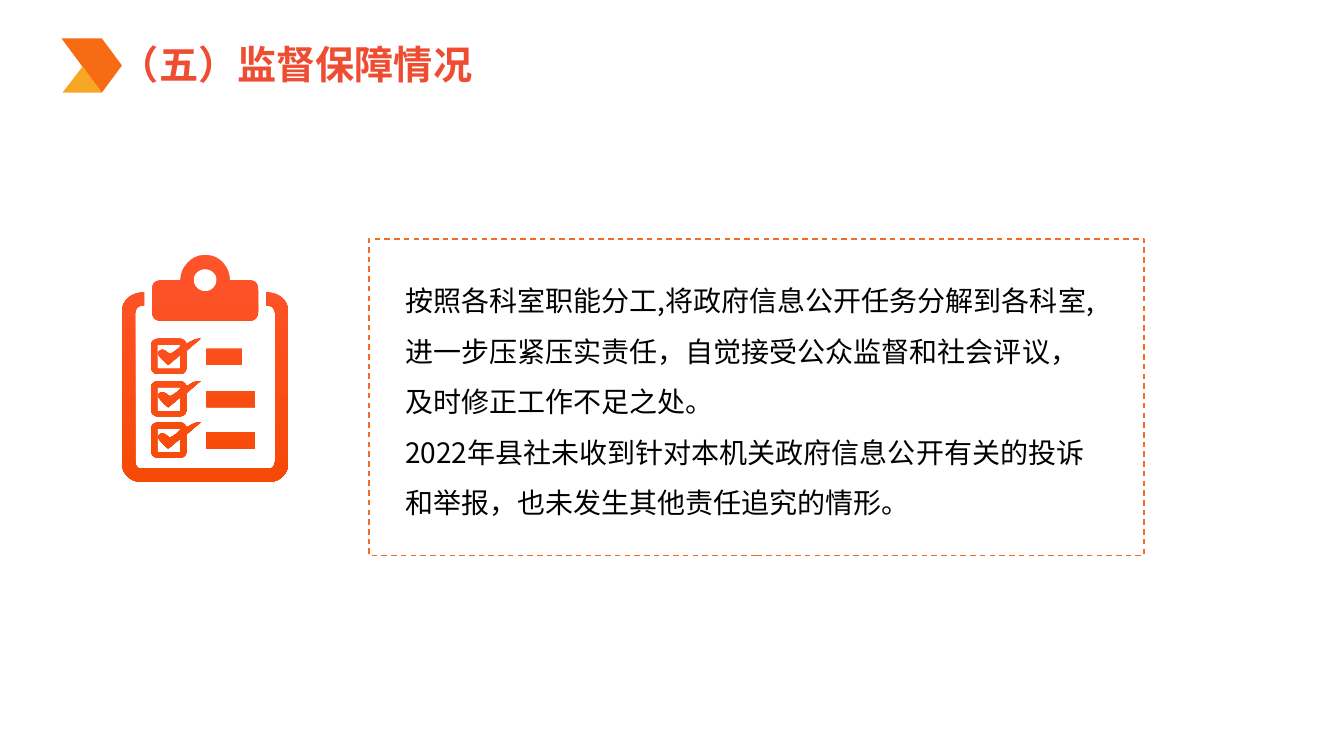
from pptx import Presentation
from pptx import util as u
from pptx.dml import color as c
from pptx.enum import dml, lang, shapes, text
from pptx.oxml.ns import qn
from lxml import etree

PX = 9144
FONT = "Noto Sans CJK SC"
ORANGE = "F76B14"
AMBER = "F8A724"

FRAME = [
    (134, 313), (134, 306, 137, 303, 143, 303), (143, 290),
    (131, 290, 121, 297, 121, 309), (121, 460),
    (121, 470, 130, 478, 139, 478), (268, 478),
    (277, 478, 286, 470, 286, 460), (286, 309),
    (286, 297, 276, 290, 264, 290), (264, 303),
    (270, 303, 273, 306, 273, 313), (273, 456),
    (273, 461, 271, 465, 267, 465), (140, 465),
    (135, 465, 134, 460, 134, 455),
]
HOLE = [
    (192, 277), (192, 272, 197, 267, 203, 267), (204, 267),
    (210, 267, 215, 272, 215, 277), (215, 278),
    (215, 284, 210, 289, 204, 289), (203, 289),
    (197, 289, 192, 284, 192, 278),
]
CLIP = [
    (179, 278), (161, 278), (154, 278, 151, 281, 151, 287), (151, 310),
    (151, 314, 154, 318, 158, 318), (249, 318),
    (253, 318, 256, 314, 256, 310), (256, 287),
    (256, 281, 253, 278, 247, 278), (228, 278),
    (228, 265, 218, 253, 205, 253), (202, 253),
    (190, 253, 179, 265, 179, 278),
]
BOX = [
    (185, 341), (184, 338, 181, 336, 178, 336), (158, 336),
    (154, 336, 150, 338, 150, 342), (150, 365),
    (150, 368, 153, 371, 156, 371), (179, 371),
    (188, 371, 185, 357, 185, 348), (199, 336), (198, 336),
    (192, 336, 188, 340, 185, 341),
]
TICK = [
    (156, 343), (156, 342, 156, 342, 158, 342), (178, 342),
    (179, 342, 179, 342, 179, 343), (179, 345, 170, 351, 169, 351),
    (167, 351, 164, 347, 161, 347), (159, 347, 157, 349, 157, 350),
    (157, 351), (157, 353, 165, 361, 167, 362), (179, 352),
    (179, 366), (156, 366),
]
ROWS = [(0, 240), (42, 253), (83, 253)]


def px(n):
    return u.Emu(n * PX)


def rgb(code):
    return c.RGBColor.from_string(code)


def lower(loop, dy):
    return [tuple(n + dy * (i % 2) for i, n in enumerate(step)) for step in loop]


def bend(start, step, parts=8):
    knots = [start, step[:2], step[2:4], step[4:]]
    points = []
    for i in range(1, parts + 1):
        t = i / parts
        s = 1 - t
        mix = (s ** 3, 3 * s * s * t, 3 * s * t * t, t ** 3)
        points.append(tuple(sum(m * k[a] for m, k in zip(mix, knots)) for a in (0, 1)))
    return points


def trace(loop):
    points = [loop[0]]
    for step in loop[1:]:
        points += bend(points[-1], step) if len(step) == 6 else [step]
    return [(x * PX, y * PX) for x, y in points]


def outline(slide, loops, *tones):
    pen = None
    for loop in loops:
        first, *rest = trace(loop)
        if pen is None:
            pen = slide.shapes.build_freeform(*first, scale=1)
        else:
            pen.move_to(*first)
        pen.add_line_segments(rest, close=True)
    shape = pen.convert_to_shape()
    shape.shadow.inherit = False
    shape.line.fill.background()
    if len(tones) == 1:
        shape.fill.solid()
        shape.fill.fore_color.rgb = rgb(tones[0])
        return
    shape.fill.gradient()
    shape.fill.gradient_angle = 270
    for stop, tone in zip(shape.fill.gradient_stops, tones):
        stop.color.rgb = rgb(tone)


def write(shape, lines, size, color, bold=False, wrap=True, space=1.0):
    frame = shape.text_frame
    frame.word_wrap = wrap
    frame.auto_size = text.MSO_AUTO_SIZE.SHAPE_TO_FIT_TEXT
    frame.vertical_anchor = text.MSO_ANCHOR.TOP
    for i, line in enumerate(lines):
        para = frame.add_paragraph() if i else frame.paragraphs[0]
        para.alignment = text.PP_ALIGN.LEFT
        para.line_spacing = space
        para.space_before = u.Pt(0)
        run = para.add_run()
        run.text = line
        font = run.font
        font.size, font.bold = u.Pt(size), bold
        font.color.rgb = rgb(color)
        font.name = FONT
        font.language_id = lang.MSO_LANGUAGE_ID.SIMPLIFIED_CHINESE
        etree.SubElement(run._r.get_or_add_rPr(), qn("a:ea")).set("typeface", FONT)


def head(slide, line):
    title = slide.shapes.title
    title.left, title.top, title.width, title.height = map(px, (109, 35, 370, 57))
    write(title, [line], 28, "EE4D32", bold=True, wrap=False)


def panel(slide, lines):
    body = slide.shapes.add_textbox(*map(px, (392, 260, 715, 262)))
    write(body, lines, 20, "000000", space=1.5)
    edge = slide.shapes.add_shape(
        shapes.MSO_SHAPE.RECTANGLE, *map(px, (366, 237, 769, 314)))
    edge.shadow.inherit = False
    edge.fill.background()
    edge.line.color.rgb = rgb("F36B27")
    edge.line.width = u.Pt(1)
    edge.line.dash_style = dml.MSO_LINE.DASH


def board(slide):
    loops = [FRAME, HOLE, CLIP]
    for dy, right in ROWS:
        bar = [(205, 346), (right, 346), (right, 362), (205, 362)]
        loops += [lower(loop, dy) for loop in (BOX, TICK, bar)]
    outline(slide, loops, "FE532B", "F54A05")


def main():
    deck = Presentation()
    deck.slide_width, deck.slide_height = u.Emu(12192000), px(750)
    slide = deck.slides.add_slide(deck.slide_layouts[5])
    panel(slide, [
        "按照各科室职能分工,将政府信息公开任务分解到各科室,进一步压紧压实责任，自觉接受公众监督和社会评议，及时修正工作不足之处。",
        "2022年县社未收到针对本机关政府信息公开有关的投诉和举报，也未发生其他责任追究的情形。",
    ])
    head(slide, "（五）监督保障情况")
    board(slide)
    outline(slide, [[(121, 65), (101, 92), (61, 38), (101, 38)]], ORANGE)
    outline(slide, [[(82, 66), (62, 92), (101, 92)]], AMBER)
    deck.save("out.pptx")


if __name__ == "__main__":
    main()
